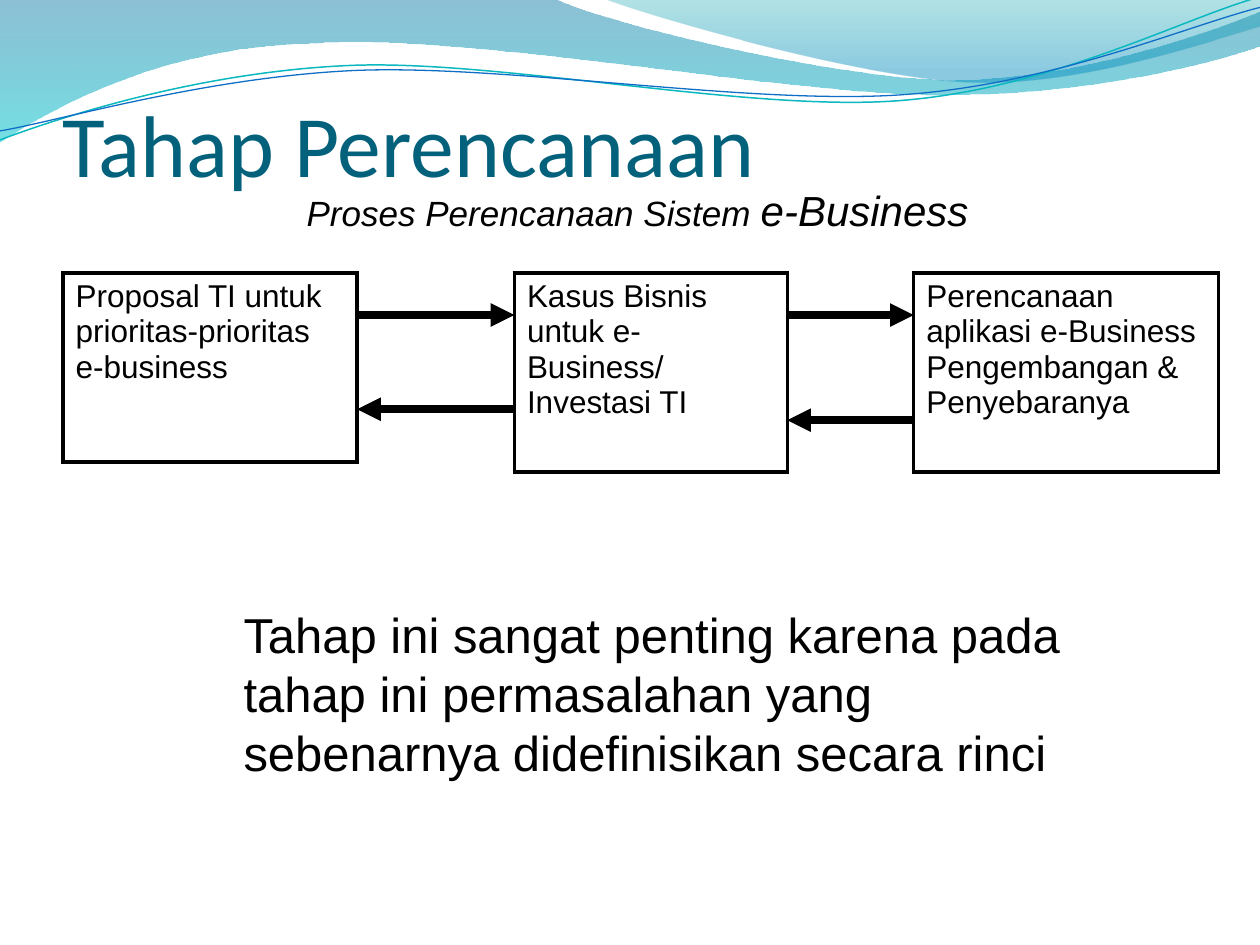
from math import cos, radians, sin

from lxml.etree import SubElement
from pptx import Presentation
from pptx.dml.color import RGBColor
from pptx.enum.shapes import MSO_CONNECTOR as Connector
from pptx.enum.text import MSO_ANCHOR as Anchor
from pptx.oxml.ns import qn
from pptx.util import Cm, Pt


def color(code):
    return RGBColor.from_string(code)


def turn(point, center, degrees):
    angle = radians(degrees)
    x, y = point[0] - center[0], point[1] - center[1]
    return (center[0] + x * cos(angle) - y * sin(angle),
            center[1] + x * sin(angle) + y * cos(angle))


class Deck:
    """Hold the style and the current slide, and draw each kind of element."""

    ink = "000000"
    body_font = "Arial"
    tilt = 2.7

    def __init__(self, width, height):
        self.file = Presentation()
        self.file.slide_width, self.file.slide_height = Cm(width), Cm(height)
        self.slide = self.file.slides.add_slide(self.file.slide_layouts[6])
        self.shapes = self.slide.shapes

    def outline(self, start, segments, close):
        points = [(Cm(x), Cm(y)) for segment in segments for x, y in segment]
        builder = self.shapes.build_freeform(Cm(start[0]), Cm(start[1]))
        builder.add_line_segments(points, close=close)
        shape = builder.convert_to_shape()
        shape.shadow.inherit = False
        steps = iter(list(shape.element.iter(qn("a:lnTo"))))
        for segment in segments:
            first, *others = [next(steps) for _ in segment]
            if others:
                first.getparent().replace(first, self.bend(first, others))
        return shape

    def bend(self, first, others):
        curve = first.makeelement(qn("a:cubicBezTo"))
        first.addprevious(curve)
        for step in (first, *others):
            curve.append(step[0])
        for step in others:
            step.getparent().remove(step)
        return curve

    def wave(self, start, segments, stops):
        shape = self.outline(start, segments, True)
        shape.line.fill.background()
        shape.fill.gradient()
        shape.fill.gradient_angle = 270
        for stop, (position, code, _) in zip(shape.fill.gradient_stops, stops):
            stop.position = position
            stop.color.rgb = color(code)
        for tint, (_, _, opacity) in zip(shape.element.spPr.iter(qn("a:srgbClr")), stops):
            SubElement(tint, qn("a:alpha"), val=str(opacity * 1000))

    def ripple(self, center, start, segments, code, weight):
        level = [[turn(point, center, self.tilt) for point in segment] for segment in segments]
        shape = self.outline(turn(start, center, self.tilt), level, False)
        shape.rotation = 360 - self.tilt
        shape.fill.background()
        shape.line.color.rgb = color(code)
        shape.line.width = Pt(weight)

    def style(self, paragraph, size, font=None, code=None, italic=None):
        paragraph.font.name = font or self.body_font
        paragraph.font.color.rgb = color(code or self.ink)
        paragraph.font.italic = italic
        if size:
            paragraph.font.size = Pt(size)

    def text(self, left, top, width, height, runs, size=None, **look):
        frame = self.shapes.add_textbox(Cm(left), Cm(top), Cm(width), Cm(height)).text_frame
        frame.word_wrap = True
        paragraph = frame.paragraphs[0]
        for words, run_size in runs:
            run = paragraph.add_run()
            run.text = words
            if run_size:
                run.font.size = Pt(run_size)
        self.style(paragraph, size, **look)
        return frame

    def stage(self, left, top, width, height, words):
        table = self.shapes.add_table(1, 1, Cm(left), Cm(top), Cm(width), Cm(height)).table
        table.first_row = table.horz_banding = False
        cell = table.cell(0, 0)
        cell.text = words
        self.style(cell.text_frame.paragraphs[0], 18)
        properties = cell._tc.get_or_add_tcPr()
        for side in "LRTB":
            border = SubElement(properties, qn(f"a:ln{side}"), w=str(Pt(2.25)))
            SubElement(SubElement(border, qn("a:solidFill")), qn("a:srgbClr"), val=self.ink)
        cell.fill.background()

    def arrow(self, start, end, y):
        line = self.shapes.add_connector(Connector.STRAIGHT, Cm(start), Cm(y), Cm(end), Cm(y))
        line.line.color.rgb = color(self.ink)
        line.line.width = Pt(4.5)
        SubElement(line.line._get_or_add_ln(), qn("a:tailEnd"), type="triangle")
        SubElement(line._element.spPr, qn("a:effectLst"))


def main():
    deck = Deck(25.4, 19.05)
    deck.wave((0, 0), [
        [(11.18, -0.03)],
        [(12.09, 0.43), (16.87, 1.6), (19.25, 1.6)],
        [(21.67, 1.6), (24.33, 0.66), (25.4, 0.23)],
        [(25.43, 0.91)],
        [(24.97, 1.12), (22.1, 1.93), (18.95, 1.91)],
        [(15.8, 1.91), (9.7, 0.71), (6.53, 0.86)],
        [(3.28, 0.91), (1.17, 2.11), (-0.03, 2.87)],
    ], [(0, "0074A1", 45), (1, "00C6CF", 55)])
    deck.wave((12.17, -0.03), [
        [(12.93, 0.28), (17.32, 1.57), (19.53, 1.65)],
        [(21.74, 1.75), (24.41, 0.81), (25.4, 0.53)],
        [(25.4, 0)],
    ], [(0, "00A1A9", 30), (0.8, "008BBF", 45)])
    deck.ripple((12.67, 1.46), (0, 2.82), [
        [(1.22, 2.36), (4.01, 1.45), (7.04, 1.32)],
        [(10.03, 1.19), (15.06, 2.26), (18.11, 2.03)],
        [(21.16, 1.8), (23.83, 0.38), (25.35, -0.05)],
    ], "0AB8BF", 0.85)
    deck.ripple((12.69, 1.5), (0, 2.64), [
        [(1.19, 2.44), (4.17, 1.55), (7.19, 1.42)],
        [(10.24, 1.3), (15.16, 2.13), (18.21, 1.91)],
        [(21.23, 1.7), (23.9, 0.53), (25.4, 0.15)],
    ], "0F6FC6", 0.75)

    title = deck.text(1.27, 0.76, 22.86, 3.18, [("Tahap Perencanaan", None)], 50,
                      font="Calibri", code="04617B")
    title.vertical_anchor = Anchor.BOTTOM
    title.margin_left = title.margin_right = title.margin_bottom = 0

    stages = [
        (1.27, 5.93, 3.81, "Proposal TI untuk prioritas-prioritas e-business"),
        (10.37, 5.5, 4.02, "Kasus Bisnis untuk e-Business/ Investasi TI"),
        (18.42, 6.14, 4.02, "Perencanaan aplikasi e-Business Pengembangan & Penyebaranya"),
    ]
    for left, width, height, words in stages:
        deck.stage(left, 5.5, width, height, words)
    for here, following, return_y in zip(stages, stages[1:], (8.25, 8.47)):
        right_edge, next_left = here[0] + here[1], following[0]
        deck.arrow(right_edge, next_left, 6.35)
        deck.arrow(next_left, right_edge, return_y)

    deck.text(5.93, 3.6, 15.24, 1.27,
              [("Proses Perencanaan Sistem ", 20), ("e-Business", 24)], italic=True)
    deck.text(4.66, 12.07, 17.36, 3.81,
              [("Tahap ini sangat penting karena pada tahap ini permasalahan yang "
                "sebenarnya didefinisikan secara rinci", None)], 28)
    deck.file.save("out.pptx")


if __name__ == "__main__":
    main()
